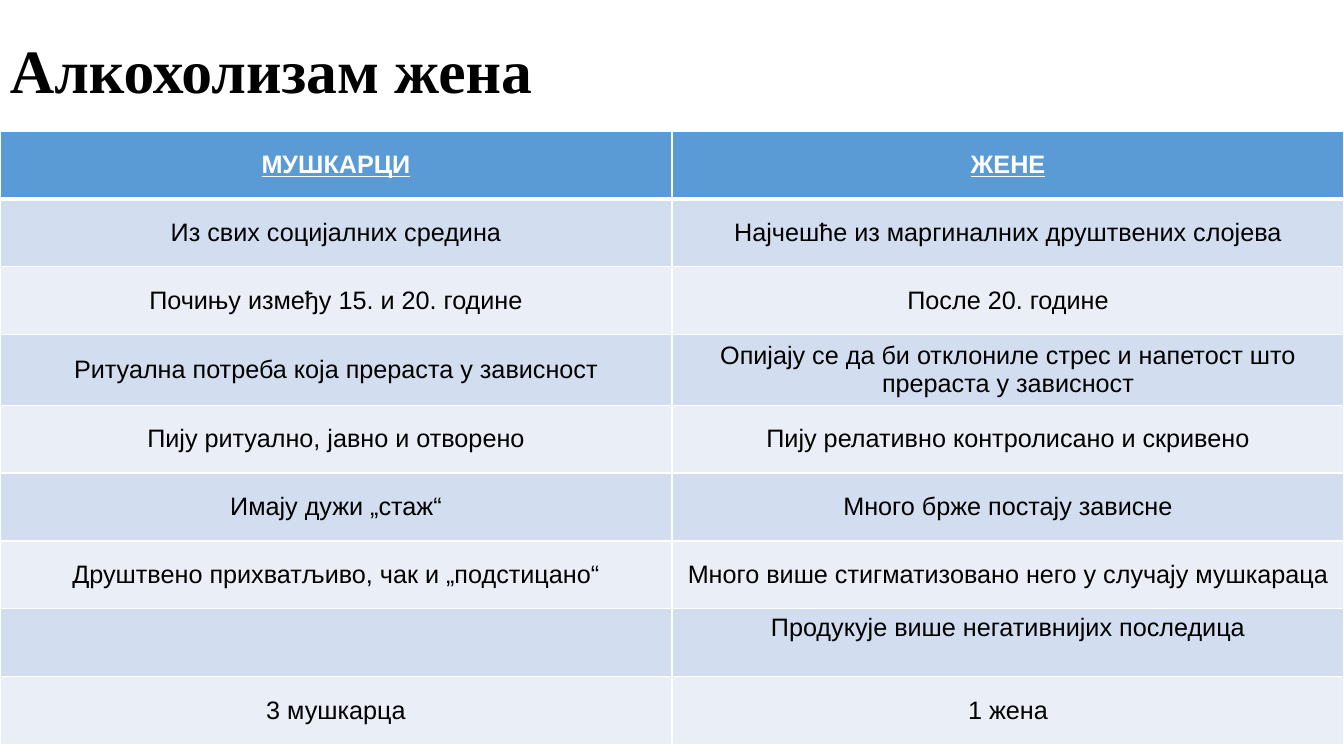
from lxml import etree
from pptx import Presentation
from pptx.dml.color import RGBColor
from pptx.enum import text
from pptx.oxml import ns
from pptx.util import Inches, Pt

TITLE = "Алкохолизам жена"
ROWS = [
    ("МУШКАРЦИ", "ЖЕНЕ"),
    ("Из свих социјалних средина", "Најчешће из маргиналних друштвених слојева"),
    ("Почињу између 15. и 20. године", "После 20. године"),
    ("Ритуална потреба која прераста у зависност",
     "Опијају се да би отклониле стрес и напетост што прераста у зависност"),
    ("Пију ритуално, јавно и отворено", "Пију релативно контролисано и скривено"),
    ("Имају дужи „стаж“", "Много брже постају зависне"),
    ("Друштвено прихватљиво, чак и „подстицано“",
     "Много више стигматизовано него у случају мушкараца"),
    ("", "Продукује више негативнијих последица"),
    ("3 мушкарца", "1 жена"),
]
TOP_ANCHORED_ROW = 7

BLACK = RGBColor(0x00, 0x00, 0x00)
WHITE = RGBColor(0xFF, 0xFF, 0xFF)
HEADER_BLUE = RGBColor(0x5B, 0x9B, 0xD5)
BANDS = [RGBColor(0xEA, 0xEF, 0xF7), RGBColor(0xD2, 0xDE, 0xEF)]

WIDTH, HEIGHT = 13.33, 7.5
TABLE_TOP, TABLE_HEIGHT = 1.3, 6.06


def add_run(para, words, font_name, size, color, bold):
    span = para.add_run()
    span.text = words
    span.font.name = font_name
    span.font.size = Pt(size)
    span.font.color.rgb = color
    span.font.bold = bold
    return span


def add_border(cell, side, width):
    properties = cell._tc.get_or_add_tcPr()
    line = etree.SubElement(properties, ns.qn(f"a:ln{side}"), w=str(Pt(width)))
    fill = etree.SubElement(line, ns.qn("a:solidFill"))
    etree.SubElement(fill, ns.qn("a:srgbClr"), val=str(WHITE))


def fill_cell(cell, words, row):
    header = row == 0
    for side in "LRTB":
        thick = (header and side == "B") or (row == 1 and side == "T")
        add_border(cell, side, 3 if thick else 1)
    cell.fill.solid()
    cell.fill.fore_color.rgb = HEADER_BLUE if header else BANDS[row % 2]
    anchor = text.MSO_ANCHOR
    cell.vertical_anchor = anchor.TOP if row == TOP_ANCHORED_ROW else anchor.MIDDLE
    if words:
        para = cell.text_frame.paragraphs[0]
        para.alignment = text.PP_ALIGN.CENTER
        span = add_run(para, words, "Arial", 18, WHITE if header else BLACK, header)
        span.font.underline = header


def main():
    deck = Presentation()
    deck.slide_width, deck.slide_height = Inches(WIDTH), Inches(HEIGHT)
    page = deck.slides.add_slide(deck.slide_layouts[6])

    box = page.shapes.add_textbox(0, 0, Inches(11.5), Inches(1.45))
    box.text_frame.word_wrap = True
    box.text_frame.vertical_anchor = text.MSO_ANCHOR.MIDDLE
    para = box.text_frame.paragraphs[0]
    para.line_spacing = 0.9
    add_run(para, TITLE, "Times New Roman", 44, BLACK, True)

    table = page.shapes.add_table(
        len(ROWS), 2, 0, Inches(TABLE_TOP), Inches(WIDTH), Inches(TABLE_HEIGHT)
    ).table
    for row, entries in enumerate(ROWS):
        for column, words in enumerate(entries):
            fill_cell(table.cell(row, column), words, row)

    deck.save("out.pptx")


if __name__ == "__main__":
    main()
